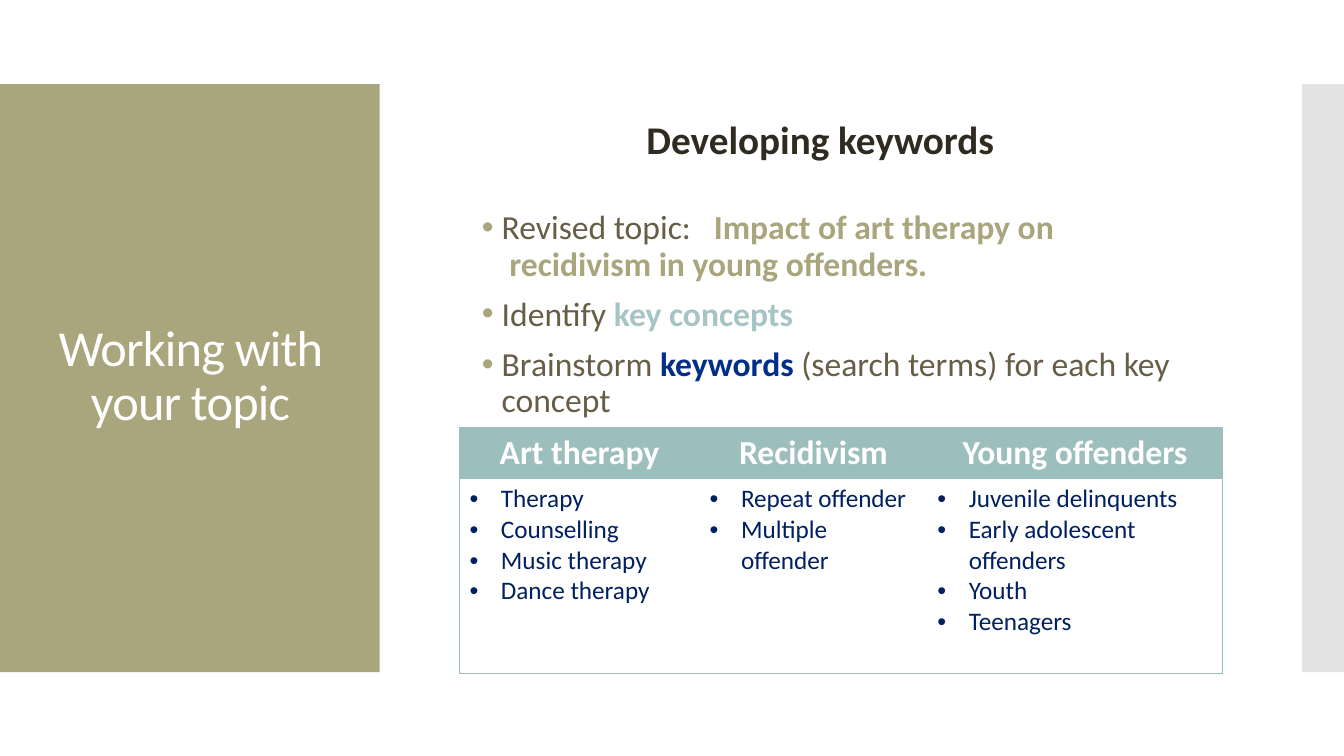
from lxml.etree import SubElement
from pptx import Presentation
from pptx.dml.color import RGBColor
from pptx.enum.shapes import MSO_SHAPE as Shape
from pptx.enum.text import MSO_ANCHOR as Anchor, MSO_AUTO_SIZE as AutoSize, PP_ALIGN as Align
from pptx.oxml.ns import qn
from pptx.util import Cm, Pt

FONT = "Calibri"
WHITE = RGBColor(0xFF, 0xFF, 0xFF)
OLIVE = RGBColor(0xA9, 0xA5, 0x7C)
GREY = RGBColor(0xC8, 0xC8, 0xC8)
DARK = RGBColor(0x2F, 0x2B, 0x20)
BROWN = RGBColor(0x67, 0x5E, 0x47)
AQUA = RGBColor(0xA6, 0xC4, 0xC4)
TEAL = RGBColor(0x9C, 0xBE, 0xBD)
BLUE = RGBColor(0x00, 0x2E, 0x89)
NAVY = RGBColor(0x00, 0x20, 0x60)

POINTS = [
    [("Revised topic:   ", BROWN, False),
     ("Impact of art therapy on\v recidivism in young offenders.", OLIVE, True)],
    [("Identify ", BROWN, False), ("key concepts", AQUA, True)],
    [("Brainstorm ", BROWN, False), ("keywords ", BLUE, True),
     ("(search terms) for each key concept", BROWN, False)],
]
KEYWORDS = {
    "Art therapy": ["Therapy", "Counselling", "Music therapy", "Dance therapy"],
    "Recidivism": ["Repeat offender", "Multiple offender"],
    "Young offenders": ["Juvenile delinquents", "Early adolescent offenders",
                        "Youth", "Teenagers"],
}
COLUMN_WIDTHS = [6.05, 5.74, 7.44]
ROW_HEIGHTS = [1.29, 4.9]


def write(para, text, size, color, bold=False, tracking=None):
    """Add text to a paragraph; a vertical tab becomes a line break."""
    for number, line in enumerate(text.split("\v")):
        if number:
            para.add_line_break()
        span = para.add_run()
        span.text = line
        font = span.font
        font.name, font.size, font.bold = FONT, Pt(size), bold
        font.color.rgb = color
        if tracking is not None:
            font._element.set("spc", str(tracking))


def add_paragraph(frame, first, before=0, spacing=1.0, align=Align.LEFT):
    para = frame.paragraphs[0] if first else frame.add_paragraph()
    para.alignment, para.line_spacing = align, spacing
    para.space_before, para.space_after = Pt(before), Pt(0)
    return para


def set_bullet(para, indent, color):
    props = para._p.get_or_add_pPr()
    props.set("marL", str(indent))
    props.set("indent", str(-indent))
    SubElement(SubElement(props, qn("a:buClr")), qn("a:srgbClr"), val=str(color))
    SubElement(props, qn("a:buFont"), typeface="Arial")
    SubElement(props, qn("a:buChar"), char="•")


def add_bar(page, left, width, color, opacity=None):
    bar = page.shapes.add_shape(Shape.RECTANGLE, Cm(left), Cm(2.12), Cm(width), Cm(14.82))
    bar.shadow.inherit = False
    bar.line.fill.background()
    bar.fill.solid()
    bar.fill.fore_color.rgb = color
    if opacity is not None:
        tint = bar._element.spPr.find(".//" + qn("a:srgbClr"))
        SubElement(tint, qn("a:alpha"), val=str(opacity * 1000))
    # Bars lie behind the placeholders
    page.shapes._spTree.insert(2, bar._element)


def place(box, left, top, width, height, anchor):
    box.left, box.top, box.width, box.height = Cm(left), Cm(top), Cm(width), Cm(height)
    frame = box.text_frame
    frame.word_wrap, frame.auto_size = True, AutoSize.NONE
    frame.vertical_anchor = anchor
    return frame


def set_borders(cell, sides):
    """Draw the named sides (L, R, T, B) and leave the others open."""
    props = cell._tc.get_or_add_tcPr()
    for side in "LRTB":
        line = SubElement(props, qn("a:ln" + side), w=str(Pt(0.75)))
        if side in sides:
            SubElement(SubElement(line, qn("a:solidFill")), qn("a:srgbClr"), val=str(TEAL))
        else:
            SubElement(line, qn("a:noFill"))


def add_keyword_table(page):
    table = page.shapes.add_table(2, len(KEYWORDS), Cm(11.58), Cm(10.77),
                                  Cm(sum(COLUMN_WIDTHS)), Cm(sum(ROW_HEIGHTS))).table
    table.horz_banding = False
    for row, height in zip(table.rows, ROW_HEIGHTS):
        row.height = Cm(height)
    for index, (concept, terms) in enumerate(KEYWORDS.items()):
        table.columns[index].width = Cm(COLUMN_WIDTHS[index])
        edges = {0: "L", len(KEYWORDS) - 1: "R"}.get(index, "")
        header, body = table.cell(0, index), table.cell(1, index)

        set_borders(header, edges + "T")
        header.fill.solid()
        header.fill.fore_color.rgb = TEAL
        write(add_paragraph(header.text_frame, True, align=Align.CENTER),
              concept, 24, WHITE, bold=True)

        set_borders(body, edges + "TB")
        body.fill.background()
        for number, term in enumerate(terms):
            para = add_paragraph(body.text_frame, number == 0)
            set_bullet(para, Cm(0.79), NAVY)
            write(para, term, 18, NAVY)


def main():
    deck = Presentation()
    deck.slide_width, deck.slide_height = Cm(33.87), Cm(19.05)
    page = deck.slides.add_slide(deck.slide_layouts[4])
    title, heading, points, *spare = page.placeholders
    for box in spare:
        box._element.getparent().remove(box._element)

    # Side bars
    add_bar(page, 0, 9.57, OLIVE)
    add_bar(page, 32.81, 1.06, GREY, opacity=50)

    # Title and heading
    frame = place(title, 0.71, 3.12, 8.18, 12.78, Anchor.MIDDLE)
    write(add_paragraph(frame, True, spacing=0.9, align=Align.CENTER),
          "Working with your topic", 36, WHITE, tracking=-60)
    frame = place(heading, 13.61, 2.92, 14.12, 1.5, Anchor.TOP)
    write(add_paragraph(frame, True, spacing=0.9, align=Align.CENTER),
          "Developing keywords", 28, DARK, bold=True)

    # Bulleted steps
    frame = place(points, 11.89, 5.31, 19.28, 5.46, Anchor.TOP)
    frame.margin_top = frame.margin_bottom = 0
    for number, parts in enumerate(POINTS):
        para = add_paragraph(frame, number == 0, before=10 if number else 0, spacing=0.9)
        set_bullet(para, Cm(0.5), OLIVE)
        for text, color, bold in parts:
            write(para, text, 24, color, bold)

    # Keywords for each concept
    add_keyword_table(page)
    deck.save("out.pptx")


if __name__ == "__main__":
    main()
